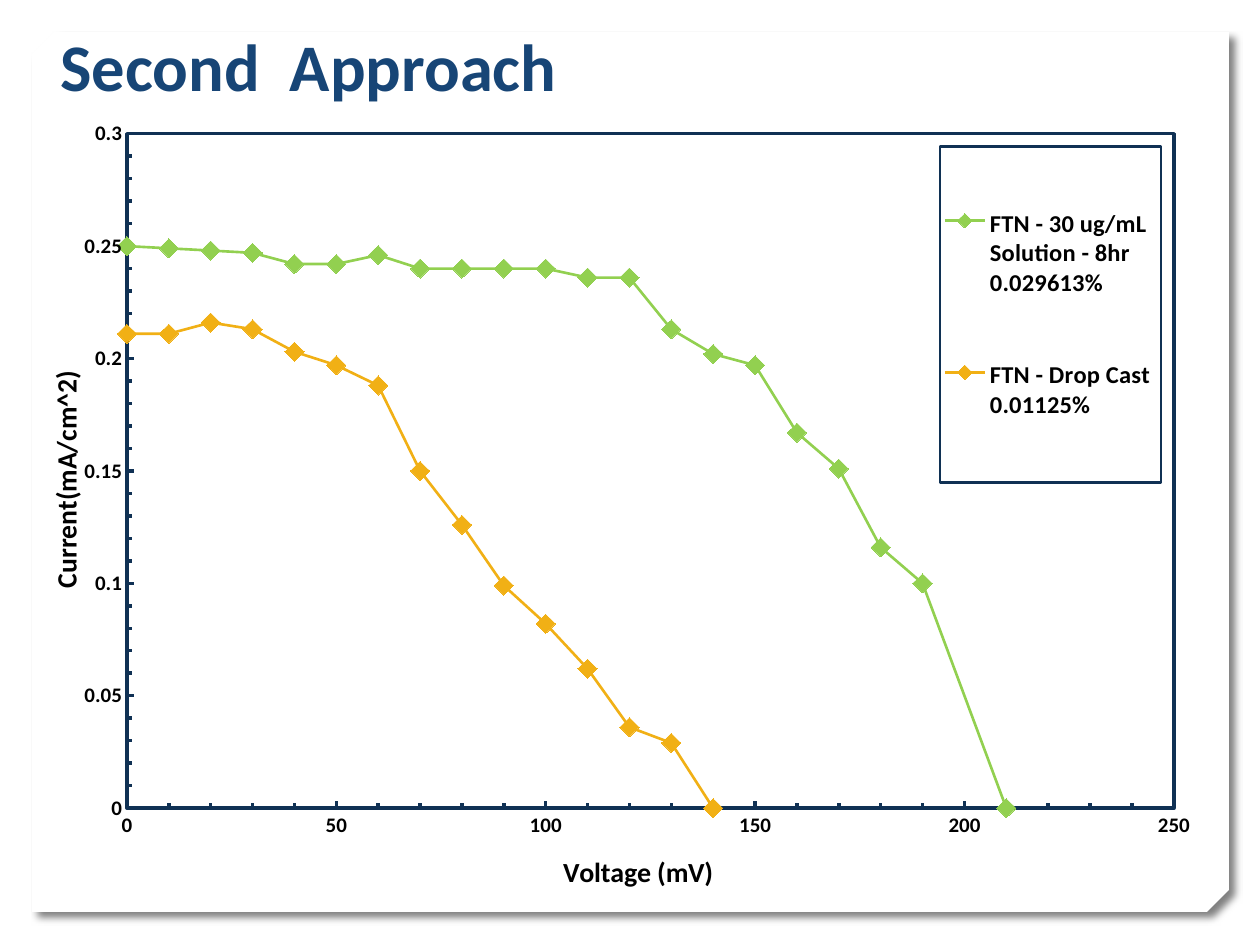
"""Build the "Second  Approach" slide with a current-voltage scatter chart."""
import lxml.etree
import pptx
import pptx.chart.data
import pptx.dml.color
import pptx.enum.chart
import pptx.enum.shapes
import pptx.enum.text
import pptx.oxml.ns
import pptx.util

PX = 914400 / 126
FONT = "Calibri"
COLORS = {"title": "174576", "axis": "103154", "text": "000000", "paper": "FFFFFF",
          "solution": "92D050", "drop": "F1B015"}
TITLE = "Second  Approach"
SERIES = [
    ("FTN - 30 ug/mL Solution - 8hr  0.029613%", "solution",
     [*range(0, 200, 10), 210],
     [0.25, 0.249, 0.248, 0.247, 0.242, 0.242, 0.246, 0.24, 0.24, 0.24, 0.24,
      0.236, 0.236, 0.213, 0.202, 0.197, 0.167, 0.151, 0.116, 0.1, 0]),
    ("FTN - Drop Cast  0.01125%", "drop",
     range(0, 150, 10),
     [0.211, 0.211, 0.216, 0.213, 0.203, 0.197, 0.188, 0.15, 0.126, 0.099,
      0.082, 0.062, 0.036, 0.029, 0]),
]
AXES = [("Voltage (mV)", 250, 50, 10, (558, 858)),
        ("Current(mA/cm^2)", 0.3, 0.05, 0.01, (42, 372))]
CARD = (32, 32, 1197, 880)
TITLE_BOX = (48, -47, 1045, 158)
CHART = (40, 111, 1161, 788)
PLOT = (127, 134, 1047, 683)
LEGEND = (940, 147, 221, 340)


def box(rect):
    return [round(v * PX) for v in rect]


def rgb(name):
    return pptx.dml.color.RGBColor.from_string(COLORS[name])


def style(font, size, color):
    font.name, font.size, font.bold = FONT, pptx.util.Pt(size), True
    font.color.rgb = rgb(color)


def sub(parent, tag, **attrs):
    return lxml.etree.SubElement(parent, pptx.oxml.ns.qn(tag), attrs)


def place(parent, index, rect, inner=False):
    """Give a chart part a manual layout from slide pixels."""
    for old in parent.findall(pptx.oxml.ns.qn("c:layout")):
        parent.remove(old)
    layout = sub(parent, "c:layout")
    parent.insert(index, layout)
    manual = sub(layout, "c:manualLayout")
    if inner:
        sub(manual, "c:layoutTarget", val="inner")
    for key in "xy":
        sub(manual, f"c:{key}Mode", val="edge")
    left, top, width, height = CHART
    values = [(rect[0] - left) / width, (rect[1] - top) / height]
    values += [v / size for v, size in zip(rect[2:], (width, height))]
    for key, value in zip("xywh", values):
        sub(manual, f"c:{key}", val=f"{value:.4f}")


def outline(parent, width):
    sp_pr = sub(parent, "c:spPr")
    sub(sp_pr, "a:noFill")
    ln = sub(sp_pr, "a:ln", w=str(pptx.util.Pt(width)))
    sub(sub(ln, "a:solidFill"), "a:srgbClr", val=COLORS["axis"])
    return sp_pr


def add_card(s):
    sp = s.shapes.add_shape(pptx.enum.shapes.MSO_SHAPE.SNIP_2_DIAG_RECTANGLE, *box(CARD))
    sp.adjustments[0], sp.adjustments[1] = 0, 0.025
    sp.fill.solid()
    sp.fill.fore_color.rgb = rgb("paper")
    sp.line.fill.background()
    sp.shadow.inherit = False
    sp_pr = sp._element.spPr
    sp_pr.find(pptx.oxml.ns.qn("a:xfrm")).set("flipV", "1")
    shadow = sub(sp_pr.find(pptx.oxml.ns.qn("a:effectLst")), "a:outerShdw",
                 blurRad=str(pptx.util.Pt(4)), dist=str(pptx.util.Pt(5)),
                 dir=str(45 * 60000), algn="tl", rotWithShape="0")
    sub(sub(shadow, "a:srgbClr", val=COLORS["text"]), "a:alpha", val="50000")


def add_title(s):
    tf = s.shapes.add_textbox(*box(TITLE_BOX)).text_frame
    tf.word_wrap = True
    tf.vertical_anchor = pptx.enum.text.MSO_ANCHOR.BOTTOM
    tf.text = TITLE
    style(tf.paragraphs[0].runs[0].font, 38, "title")


def format_axis(axis, title, maximum, major, minor, corner):
    axis.minimum_scale, axis.maximum_scale = 0, maximum
    axis.major_unit, axis.minor_unit = major, minor
    axis.has_major_gridlines = axis.has_minor_gridlines = False
    axis.major_tick_mark = axis.minor_tick_mark = pptx.enum.chart.XL_TICK_MARK.INSIDE
    axis.tick_labels.number_format = "General"
    axis.tick_labels.number_format_is_linked = False
    style(axis.tick_labels.font, 12, "text")
    axis.format.line.color.rgb = rgb("axis")
    axis.format.line.width = pptx.util.Pt(2)
    tf = axis.axis_title.text_frame
    tf.text = title
    style(tf.paragraphs[0].runs[0].font, 16, "text")
    place(axis.axis_title._element, 1, corner)


def add_chart(s):
    data = pptx.chart.data.XyChartData()
    for name, _, xs, ys in SERIES:
        series = data.add_series(name)
        for x, y in zip(xs, ys):
            series.add_data_point(x, y)
    kind = pptx.enum.chart.XL_CHART_TYPE.XY_SCATTER_LINES
    chart = s.shapes.add_chart(kind, *box(CHART), data).chart
    chart.has_title = False
    chart.font.name, chart.font.size = FONT, pptx.util.Pt(10)
    chart.font.color.rgb = rgb("axis")
    plot = chart.plots[0]
    plot.vary_by_categories = False
    for series, (_, color, _, _) in zip(plot.series, SERIES):
        series.format.line.color.rgb = rgb(color)
        series.format.line.width = pptx.util.Pt(1.5)
        marker = series.marker
        marker.style, marker.size = pptx.enum.chart.XL_MARKER_STYLE.DIAMOND, 11
        marker.format.fill.solid()
        marker.format.fill.fore_color.rgb = rgb(color)
        marker.format.line.color.rgb = rgb(color)
    for axis, settings in zip((chart.category_axis, chart.value_axis), AXES):
        format_axis(axis, *settings)
    area = chart._chartSpace.chart.plotArea
    place(area, 0, PLOT, inner=True)
    outline(area, 2)
    chart.has_legend = True
    legend = chart.legend
    legend.position = pptx.enum.chart.XL_LEGEND_POSITION.RIGHT
    legend.include_in_layout = False
    style(legend.font, 14, "text")
    place(legend._element, 1, LEGEND)
    legend._element.find(pptx.oxml.ns.qn("c:txPr")).addprevious(outline(legend._element, 1.5))


def main():
    prs = pptx.Presentation()
    prs.slide_width, prs.slide_height = box((1260, 945))
    s = prs.slides.add_slide(prs.slide_layouts[6])
    add_card(s)
    add_title(s)
    add_chart(s)
    prs.save("out.pptx")


if __name__ == "__main__":
    main()
